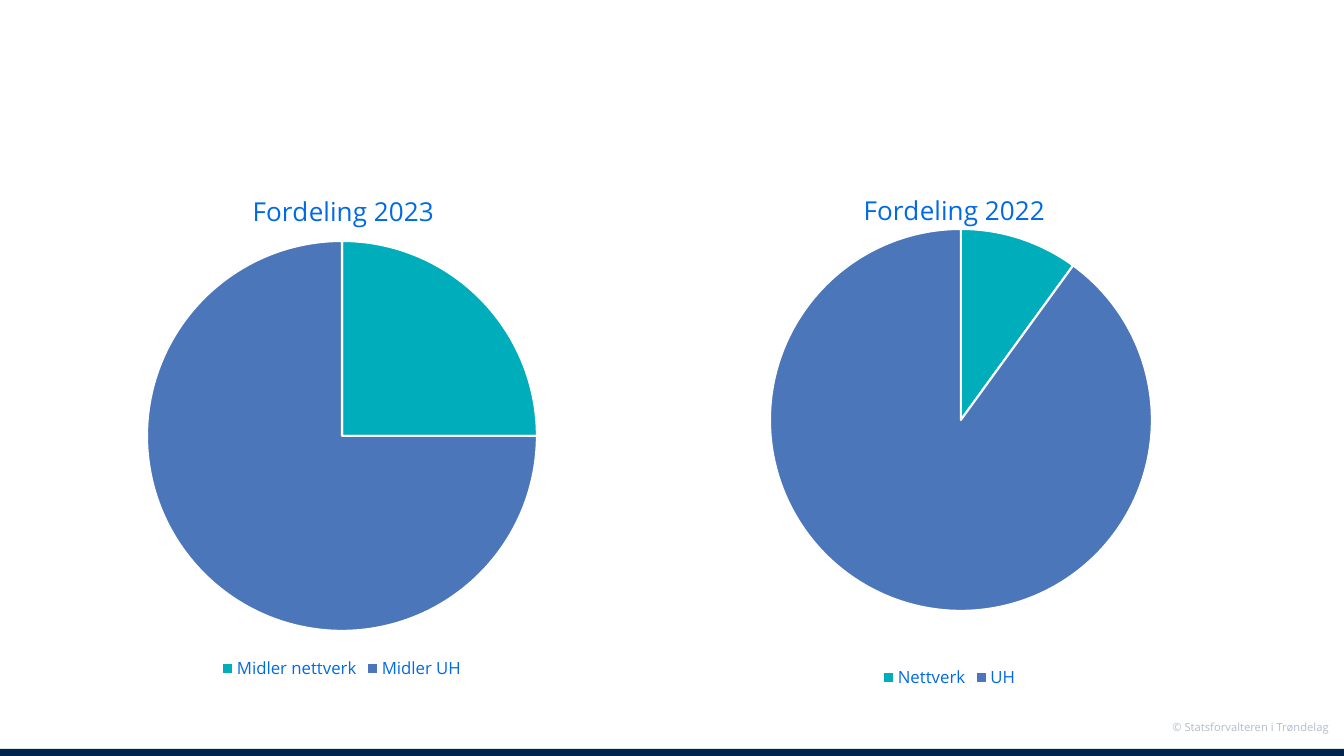
from lxml import etree
from pptx import Presentation
from pptx.chart.data import CategoryChartData
from pptx.dml.color import RGBColor
from pptx.enum.chart import XL_CHART_TYPE, XL_LEGEND_POSITION
from pptx.enum.shapes import MSO_SHAPE
from pptx.enum.text import PP_ALIGN
from pptx.oxml import parse_xml
from pptx.oxml.ns import nsdecls, qn
from pptx.util import Pt

PIE = XL_CHART_TYPE.PIE
BOTTOM = XL_LEGEND_POSITION.BOTTOM
RECT = MSO_SHAPE.RECTANGLE
RIGHT = PP_ALIGN.RIGHT
FONT = "Open Sans"
PX = 914400 / 100.8
WIDE, HIGH = 1344, 756
COLORS = {"navy": "00244E", "blue": "006AE5", "teal": "00ADBA",
          "slate": "4C76BA", "white": "FFFFFF"}


def px(*nums):
    """Turn pixel lengths into EMU."""
    return [round(n * PX) for n in nums]


def color(name):
    """Look up a named colour."""
    return RGBColor.from_string(COLORS[name])


def style(font, size, name):
    """Set the face, size and colour of a font."""
    font.name = FONT
    font.size = Pt(size)
    font.color.rgb = color(name)


def layout(box, left, top, width=None, height=None):
    """Build a manual chart layout from pixels inside a chart box."""
    inner = width is not None
    parts = ['<c:layoutTarget val="inner"/>'] if inner else []
    parts += ['<c:xMode val="edge"/>', '<c:yMode val="edge"/>']
    parts += [f'<c:x val="{left / box[2]:.4f}"/>', f'<c:y val="{top / box[3]:.4f}"/>']
    if inner:
        parts += [f'<c:w val="{width / box[2]:.4f}"/>', f'<c:h val="{height / box[3]:.4f}"/>']
    return parse_xml(f'<c:layout {nsdecls("c")}><c:manualLayout>{"".join(parts)}'
                     '</c:manualLayout></c:layout>')


def pie(slide, box, title, shares, head, disc):
    """Draw a pie chart with a title above and a legend below."""
    data = CategoryChartData()
    data.categories = list(shares)
    data.add_series("Series 1", list(shares.values()))
    chart = slide.shapes.add_chart(PIE, *px(*box), data).chart
    style(chart.font, 10, "navy")

    chart.has_title = True
    frame = chart.chart_title.text_frame
    run = frame.paragraphs[0].add_run()
    run.text = title
    style(run.font, 18.6, "blue")
    run.font.bold = False
    chart.chart_title.include_in_layout = False
    node = chart.chart_title._element
    for old in node.findall(qn("c:layout")):
        node.remove(old)
    node.find(qn("c:tx")).addnext(layout(box, *head))

    chart.has_legend = True
    chart.legend.position = BOTTOM
    chart.legend.include_in_layout = False
    style(chart.legend.font, 12, "blue")

    plot = chart.plots[0]
    plot.vary_by_categories = True
    for i, name in enumerate(("teal", "slate")):
        form = plot.series[0].points[i].format
        form.fill.solid()
        form.fill.fore_color.rgb = color(name)
        form.line.color.rgb = color("white")
        form.line.width = Pt(1.5)
    area = chart._chartSpace.chart.plotArea
    for old in area.findall(qn("c:layout")):
        area.remove(old)
    area.insert(0, layout(box, *disc))


def footer(slide, box):
    """Draw the bottom bar with the copyright line above it."""
    left, top, width, height = box
    bar = slide.shapes.add_shape(RECT, *px(left, top, width, height))
    bar.shadow.inherit = False
    bar.fill.solid()
    bar.fill.fore_color.rgb = color("navy")
    bar.line.fill.background()

    note = slide.shapes.add_textbox(*px(left + width - 191, top - 34, 186, 24))
    frame = note.text_frame
    frame.word_wrap = True
    line = frame.paragraphs[0]
    line.alignment = RIGHT
    run = line.add_run()
    run.text = "© Statsforvalteren i Trøndelag"
    style(run.font, 8, "navy")
    tint = run.font._element.find(".//" + qn("a:srgbClr"))
    etree.SubElement(tint, qn("a:alpha"), val="30000")


def main():
    """Build the slide and save it."""
    deck = Presentation()
    deck.slide_width, deck.slide_height = px(WIDE, HIGH)
    slide = deck.slides.add_slide(deck.slide_layouts[6])
    footer(slide, (0, 749, WIDE, 7))
    pie(slide, (104, 164, 476, 520), "Fordeling 2023",
        {"Midler nettverk": 25, "Midler UH": 75}, (144, 21), (43, 77, 390, 390))
    pie(slide, (659, 163, 581, 530), "Fordeling 2022",
        {"Nettverk": 10, "UH": 90}, (200, 21), (111, 66, 382, 382))
    deck.save("out.pptx")


if __name__ == "__main__":
    main()
